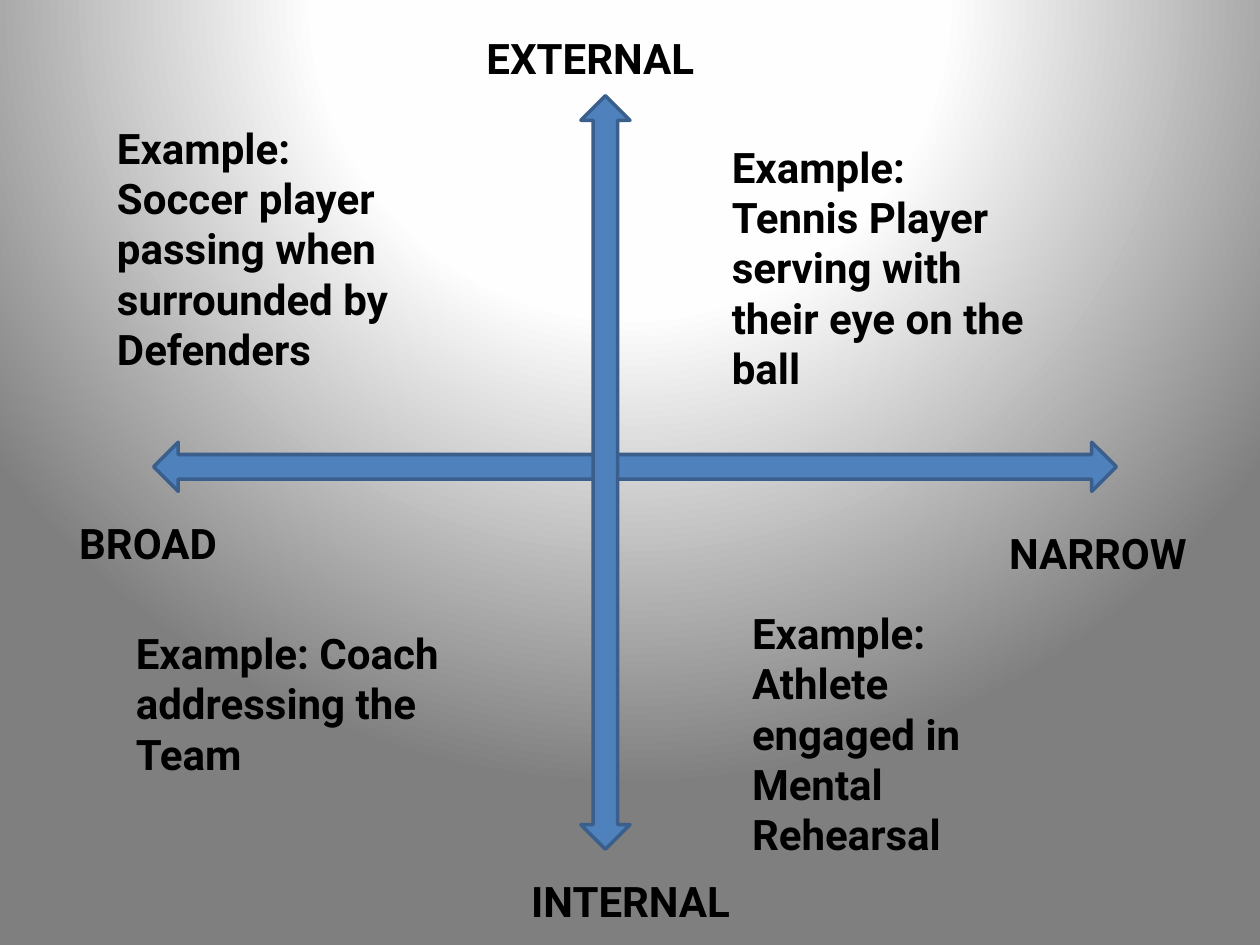
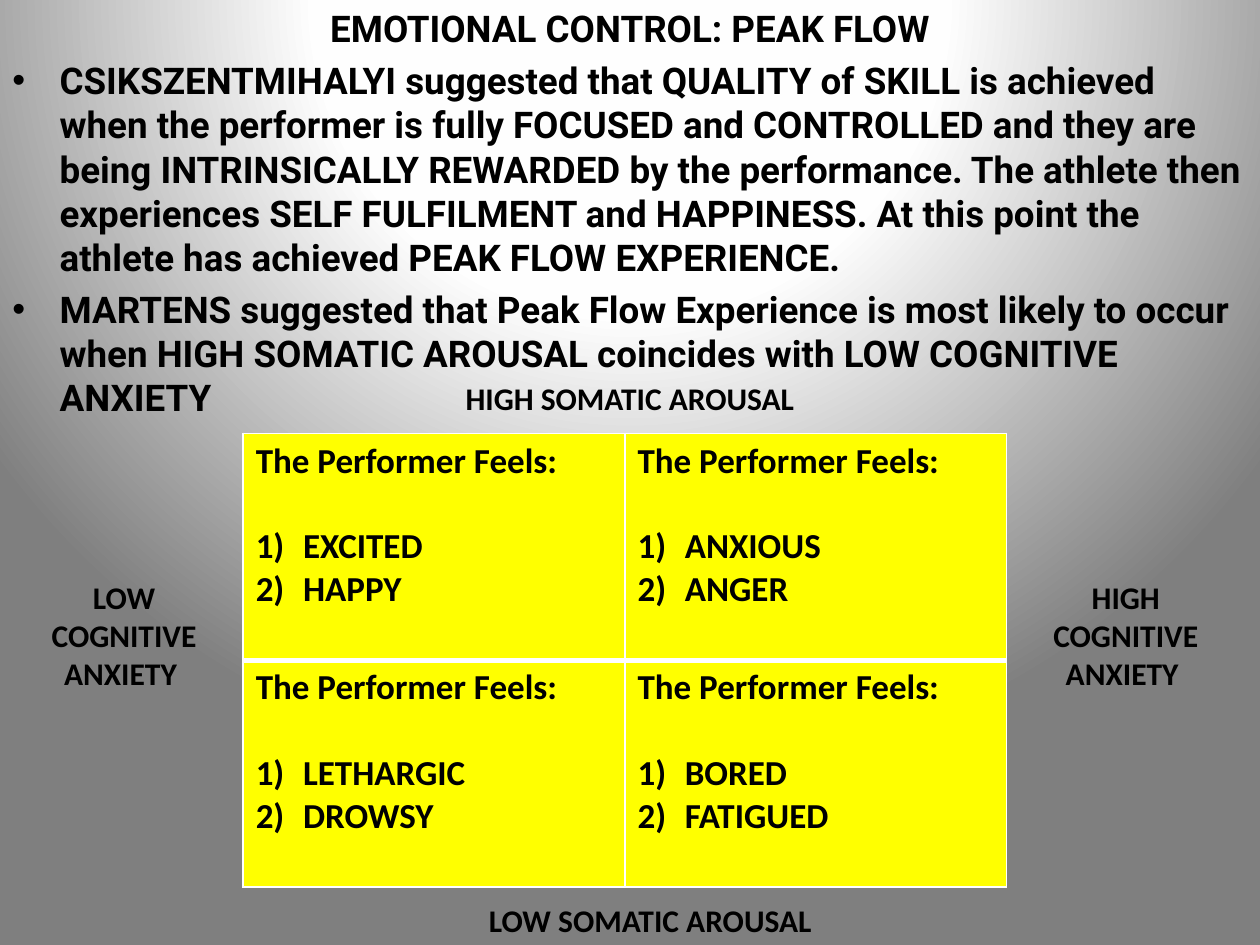
from lxml.etree import SubElement
from pptx import Presentation
from pptx.dml.color import RGBColor
from pptx.enum.shapes import MSO_SHAPE as Shape
from pptx.enum.text import MSO_AUTO_SIZE as AutoSize, PP_ALIGN as Align
from pptx.oxml.ns import qn
from pptx.util import Inches, Pt

COLORS = {
    "text": "000000", "arrow": "4F81BD", "arrow_line": "3A5F8C",
    "cell": "FFFF00", "border": "FFFFFF",
}
BACKGROUND_STOPS = [(0, "FFFFFF"), (40, "FEFEFE"), (100, "7F7F7F")]
GLOW_CENTRE = {"l": 50, "t": -80, "r": 50, "b": 180}
HANGING = 0.375


def color(name):
    return RGBColor.from_string(COLORS[name])


def add_element(parent, tag, **attributes):
    element = SubElement(parent, qn(tag))
    for name, value in attributes.items():
        element.set(name, str(value))
    return element


def set_background(master):
    """Give every slide a circular gradient centred above its middle."""
    master.background.fill.gradient()
    gradient = master.element.xpath("p:cSld/p:bg/p:bgPr/a:gradFill")[0]
    for child in list(gradient):
        gradient.remove(child)
    stops = add_element(gradient, "a:gsLst")
    for position, value in BACKGROUND_STOPS:
        stop = add_element(stops, "a:gs", pos=position * 1000)
        add_element(stop, "a:srgbClr", val=value)
    circle = add_element(gradient, "a:path", path="circle")
    add_element(circle, "a:fillToRect",
                **{side: percent * 1000 for side, percent in GLOW_CENTRE.items()})


def style_paragraph(paragraph, font, size, align=Align.LEFT):
    paragraph.alignment = align
    paragraph.font.name = font
    paragraph.font.size = Pt(size)
    paragraph.font.bold = True
    paragraph.font.color.rgb = color("text")


def write_lines(frame, lines, font, size, align=Align.LEFT):
    frame.text = "\n".join(lines)
    for paragraph in frame.paragraphs:
        style_paragraph(paragraph, font, size, align)


def add_marker(paragraph, numbered=False):
    """Add a hanging bullet or a number such as 1)."""
    properties = paragraph._p.get_or_add_pPr()
    properties.set("marL", str(Inches(HANGING)))
    properties.set("indent", str(-Inches(HANGING)))
    marker = properties.makeelement(qn("a:buAutoNum" if numbered else "a:buChar"))
    if numbered:
        marker.set("type", "arabicParenR")
    else:
        marker.set("char", "•")
    children = [marker]
    if not numbered:
        bullet_font = properties.makeelement(qn("a:buFont"))
        bullet_font.set("typeface", "Arial")
        children.insert(0, bullet_font)
    defaults = properties.find(qn("a:defRPr"))
    for child in children:
        defaults.addprevious(child)


def add_text(slide, box, lines, font, size, align=Align.LEFT, grow=True):
    shape = slide.shapes.add_textbox(*map(Inches, box))
    frame = shape.text_frame
    frame.word_wrap = True
    frame.auto_size = AutoSize.SHAPE_TO_FIT_TEXT if grow else AutoSize.NONE
    write_lines(frame, lines, font, size, align)
    return frame


def add_axis(slide, kind, box):
    shape = slide.shapes.add_shape(kind, *map(Inches, box))
    shape.shadow.inherit = False
    shape.fill.solid()
    shape.fill.fore_color.rgb = color("arrow")
    shape.line.color.rgb = color("arrow_line")
    shape.line.width = Pt(2)


def set_borders(cell, **widths):
    properties = cell._tc.get_or_add_tcPr()
    for side in "LRTB":
        line = add_element(properties, f"a:ln{side}", w=Pt(widths.get(side, 1)))
        fill = add_element(line, "a:solidFill")
        add_element(fill, "a:srgbClr", val=COLORS["border"])


def fill_feelings_cell(cell, feelings):
    cell.fill.solid()
    cell.fill.fore_color.rgb = color("cell")
    write_lines(cell.text_frame, ["The Performer Feels:", *feelings], "Calibri", 20)
    heading, *items = cell.text_frame.paragraphs
    heading.space_after = Pt(24.4)
    for paragraph in items:
        add_marker(paragraph, numbered=True)


def add_feelings_table(slide, box, rows):
    left, top, width, height = map(Inches, box)
    table = slide.shapes.add_table(len(rows), len(rows[0]), left, top, width, height).table
    table.first_row = table.horz_banding = False
    for row_index, row in enumerate(rows):
        shared_side = "B" if row_index == 0 else "T"
        for column_index, feelings in enumerate(row):
            cell = table.cell(row_index, column_index)
            set_borders(cell, **{shared_side: 3})
            fill_feelings_cell(cell, feelings)


def build_attention_slide(slide):
    add_axis(slide, Shape.LEFT_RIGHT_ARROW, (1.22, 3.51, 7.64, 0.39))
    add_axis(slide, Shape.UP_DOWN_ARROW, (4.61, 0.76, 0.39, 5.98))
    labels = [
        ("NARROW", (7.91, 4.14, 1.81, 0.5), Align.LEFT),
        ("BROAD", (0.35, 4.06, 1.65, 0.5), Align.CENTER),
        ("EXTERNAL", (3.66, 0.21, 2.05, 0.5), Align.CENTER),
        ("INTERNAL", (3.98, 6.9, 2.05, 0.5), Align.CENTER),
    ]
    for label, box, align in labels:
        add_text(slide, box, [label], "Roboto", 24, align)
    examples = [
        ("Soccer player passing when surrounded by Defenders", (0.83, 0.92, 2.52, 2.12)),
        ("Tennis Player serving with their eye on the ball", (5.71, 1.07, 2.6, 1.72)),
        ("Coach addressing the Team", (0.98, 4.93, 2.76, 1.31)),
        ("Athlete engaged in Mental Rehearsal", (5.87, 4.77, 2.52, 1.72)),
    ]
    for example, box in examples:
        add_text(slide, box, [f"Example: {example}"], "Roboto", 24)


def build_peak_flow_slide(slide):
    body = add_text(slide, (0, 0, 10, 7.5), [
        "EMOTIONAL CONTROL: PEAK FLOW",
        "CSIKSZENTMIHALYI suggested that QUALITY of SKILL is achieved when the performer "
        "is fully FOCUSED and CONTROLLED and they are being INTRINSICALLY REWARDED by the "
        "performance. The athlete then experiences SELF FULFILMENT and HAPPINESS. At this "
        "point the athlete has achieved PEAK FLOW EXPERIENCE.",
        "MARTENS suggested that Peak Flow Experience is most likely to occur when HIGH "
        "SOMATIC AROUSAL coincides with LOW COGNITIVE ANXIETY",
    ], "Roboto", 21, grow=False)
    title, *points = body.paragraphs
    title.alignment = Align.CENTER
    for paragraph in body.paragraphs:
        paragraph.space_before = Pt(4.5)
    for paragraph in points:
        add_marker(paragraph)

    add_feelings_table(slide, (1.93, 3.44, 6.06, 3.6), [
        [("EXCITED", "HAPPY"), ("ANXIOUS", "ANGER")],
        [("LETHARGIC", "DROWSY"), ("BORED", "FATIGUED")],
    ])
    for level, left, top in [("HIGH", 3.03, 2.96), ("LOW", 3.19, 7.1)]:
        add_text(slide, (left, top, 3.94, 0.4), [f"{level} SOMATIC AROUSAL"],
                 "Calibri", 18, Align.CENTER)
    for level, left in [("LOW", 0.2), ("HIGH", 8.15)]:
        add_text(slide, (left, 4.54, 1.57, 1.01), [level, "COGNITIVE", "ANXIETY "],
                 "Calibri", 18, Align.CENTER)


def main():
    presentation = Presentation()
    presentation.slide_width = Inches(10)
    presentation.slide_height = Inches(7.5)
    set_background(presentation.slide_master)
    blank = presentation.slide_layouts[6]
    for build in (build_attention_slide, build_peak_flow_slide):
        build(presentation.slides.add_slide(blank))
    presentation.save("out.pptx")


if __name__ == "__main__":
    main()
